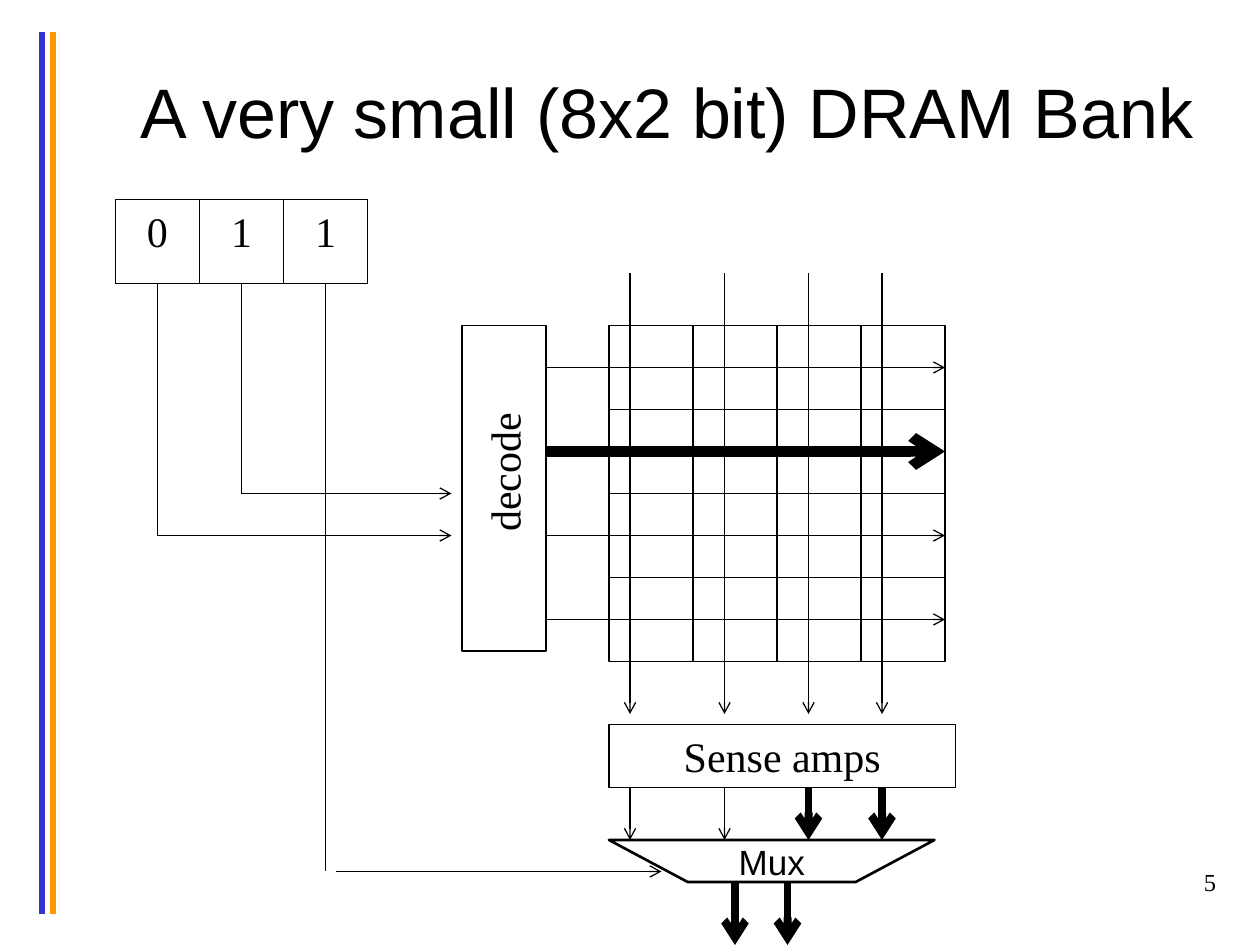
from lxml import etree
from pptx import Presentation
from pptx.dml.color import RGBColor
from pptx.enum.shapes import MSO_CONNECTOR, MSO_SHAPE
from pptx.enum.text import MSO_ANCHOR, PP_ALIGN
from pptx.oxml.ns import qn
from pptx.util import Pt

STRAIGHT = MSO_CONNECTOR.STRAIGHT
RECTANGLE = MSO_SHAPE.RECTANGLE
LEFT, CENTER, RIGHT = PP_ALIGN.LEFT, PP_ALIGN.CENTER, PP_ALIGN.RIGHT
TOP, MIDDLE = MSO_ANCHOR.TOP, MSO_ANCHOR.MIDDLE
BLACK, BLUE, ORANGE = "000000", "3333CC", "FF9900"
SANS, SERIF = "Arial", "Times New Roman"
BOTTOM_SIDE, RIGHT_SIDE = 2, 3
THIN, OUTLINE, BOLD, HEAVY = 0.75, 1.5, 4.5, 6
CELL = 48

color = RGBColor.from_string

prs = Presentation()
prs.slide_width, prs.slide_height = Pt(720), Pt(540)
slide = prs.slides.add_slide(prs.slide_layouts[5])
shapes = slide.shapes


def write(shape, text, size, font, align=CENTER, anchor=TOP, wrap=True):
    frame = shape.text_frame
    frame.word_wrap = wrap
    frame.vertical_anchor = anchor
    paragraph = frame.paragraphs[0]
    paragraph.alignment = align
    run = paragraph.add_run()
    run.text = text
    run.font.size = Pt(size)
    run.font.name = font
    run.font.color.rgb = color(BLACK)


def draw_line(x1, y1, x2, y2, width=THIN, arrow=True, line_color=BLACK):
    wire = shapes.add_connector(STRAIGHT, Pt(x1), Pt(y1), Pt(x2), Pt(y2))
    wire.line.width = Pt(width)
    wire.line.color.rgb = color(line_color)
    if arrow:
        line_xml = wire.line._get_or_add_ln()
        etree.SubElement(line_xml, qn("a:tailEnd"), type="arrow")
    etree.SubElement(wire._element.spPr, qn("a:effectLst"))
    return wire


for x, stripe_color in ((24, BLUE), (30.25, ORANGE)):
    draw_line(x, 18, x, 522, 3, False, stripe_color)

title = shapes.title
title.left, title.top, title.width, title.height = Pt(54), Pt(18), Pt(654), Pt(90)
write(title, "A very small (8x2 bit) DRAM Bank", 40, SANS, anchor=MIDDLE)

bank_left, bank_top = 348, 186
bits_left, bits_top = 66, 114
boxes = [(bank_left + col * CELL, bank_top + row * CELL, CELL, CELL, "")
         for row in range(4) for col in range(4)]
boxes += [(bits_left + i * CELL, bits_top, CELL, CELL, bit) for i, bit in enumerate("011")]
boxes += [(264, bank_top, CELL, 186, ""), (bank_left, 414, 198, 36, "Sense amps")]

blocks = []
for left, top, width, height, label in boxes:
    block = shapes.add_shape(RECTANGLE, Pt(left), Pt(top), Pt(width), Pt(height))
    block.shadow.inherit = False
    block.fill.background()
    block.line.color.rgb = color(BLACK)
    block.line.width = Pt(THIN)
    if label:
        write(block, label, 24, SERIF)
    blocks.append(block)
last_column, address_bits = blocks[3:16:4], blocks[16:19]

decode_label = shapes.add_textbox(Pt(247), Pt(251), Pt(83), Pt(37))
decode_label.rotation = 270
write(decode_label, "decode", 24, SERIF, LEFT, wrap=False)

for row, (cell, width) in enumerate(zip(last_column, (THIN, HEAVY, THIN, THIN))):
    y = bank_top + CELL / 2 + row * CELL
    word_line = draw_line(312, y, 540, y, width)
    word_line.end_connect(cell, RIGHT_SIDE)

address_routes = ((306, 90, 258), (282, 138, 258), (498, 192, 378))
for i, (bit, (y, start, end)) in enumerate(zip(address_bits, address_routes)):
    x = bits_left + CELL / 2 + i * CELL
    drop = draw_line(x, bits_top + CELL, x, y, arrow=False)
    drop.begin_connect(bit, BOTTOM_SIDE)
    draw_line(start, y, end, y)

for x, width in ((360, THIN), (414, THIN), (462, BOLD), (504, BOLD)):
    draw_line(x, 156, x, 408)
    draw_line(x, 450, x, 480, width)

mux_outline = shapes.build_freeform(Pt(348), Pt(480))
mux_outline.add_line_segments([(Pt(393), Pt(504)), (Pt(489), Pt(504)), (Pt(534), Pt(480))])
mux = mux_outline.convert_to_shape()
mux.shadow.inherit = False
mux.fill.background()
mux.line.color.rgb = color(BLACK)
mux.line.width = Pt(OUTLINE)
write(mux, "Mux", 20, SANS, anchor=MIDDLE, wrap=False)

for x in (420, 450):
    draw_line(x, 504, x, 540, BOLD)

page_number = shapes.add_textbox(Pt(552), Pt(492), Pt(150), Pt(36))
write(page_number, "5", 14, SERIF, RIGHT)

prs.save("out.pptx")
